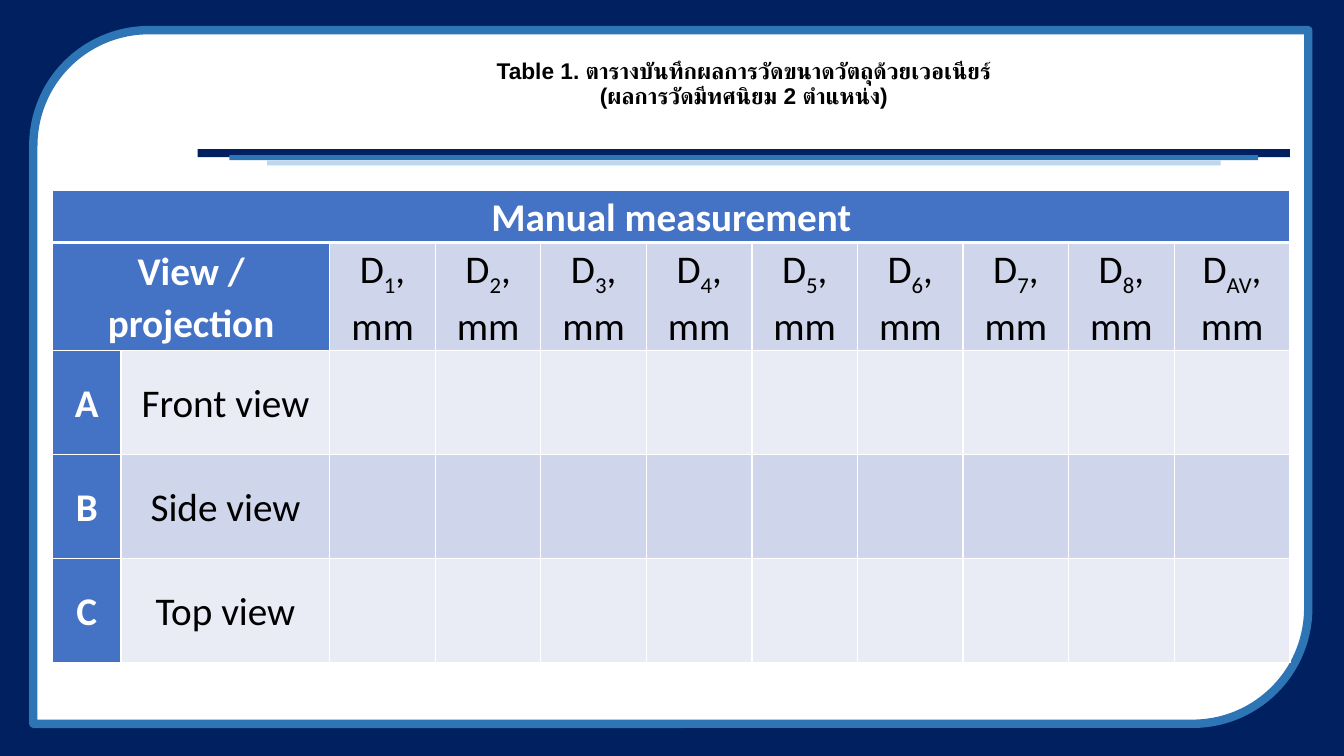
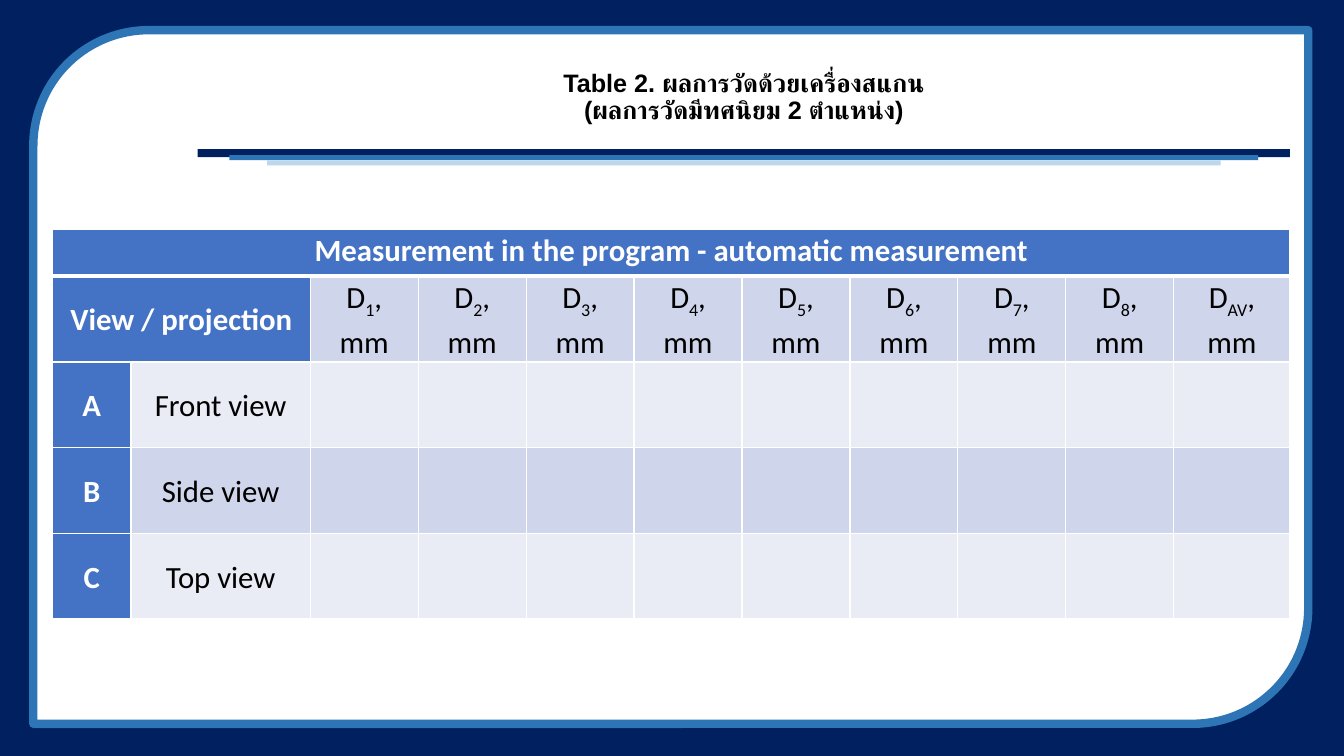
from dataclasses import dataclass

from lxml import etree
from pptx import Presentation
from pptx.dml.color import RGBColor
from pptx.enum.shapes import MSO_SHAPE
from pptx.enum.text import MSO_ANCHOR, MSO_AUTO_SIZE, PP_ALIGN
from pptx.oxml.ns import qn
from pptx.util import Cm, Pt

RECT = MSO_SHAPE.RECTANGLE
DIAGONAL = MSO_SHAPE.ROUND_2_DIAG_RECTANGLE
TOP = MSO_ANCHOR.TOP
MIDDLE = MSO_ANCHOR.MIDDLE
CENTER = PP_ALIGN.CENTER
NO_FIT = MSO_AUTO_SIZE.NONE


@dataclass(frozen=True)
class Theme:
    navy: str = "002060"
    blue: str = "2E75B6"
    pale: str = "BDD7EE"
    head: str = "4472C4"
    band_dark: str = "CFD5EA"
    band_light: str = "E9EBF5"
    white: str = "FFFFFF"
    black: str = "000000"
    title_font: str = "Arial"
    table_font: str = "Calibri"
    frame_line: float = 6
    grid_line: float = 1
    head_line: float = 3


THEME = Theme()
SLIDE_W, SLIDE_H = 33.87, 19.05
TITLE_BOX = (4.98, 1.24, 27.53, 2.46)
RULE_BOX = (4.98, 3.76, 27.53, 0.41)
VIEWS = (("A", "Front view"), ("B", "Side view"), ("C", "Top view"))
DIAMETERS = (*"12345678", "AV")
TABLES = (
    dict(title="Table 1. ตารางบันทึกผลการวัดขนาดวัตถุด้วยเวอเนียร์\v(ผลการวัดมีทศนิยม 2 ตำแหน่ง)",
         title_size=16.2, title_bottom=0.79, heading="Manual measurement",
         box=(1.32, 4.8, 31.19, 11.79), size=28, inset=0.25,
         label_widths=(1.73, 5.26), value_width=2.66, row_height=2.62),
    dict(title="Table 2. ผลการวัดด้วยเครื่องสแกน\v(ผลการวัดมีทศนิยม 2 ตำแหน่ง)",
         title_size=18, title_bottom=0.13,
         heading="Measurement in the program - automatic measurement",
         box=(1.32, 5.79, 31.19, 9.81), size=22, inset=0.41,
         label_widths=(1.98, 4.52), value_width=2.72, row_height=2.16),
)


def rgb(color):
    return RGBColor.from_string(color)


def add_block(shapes, kind, box, fill, line=None):
    sp = shapes.add_shape(kind, *map(Cm, box))
    sp.shadow.inherit = False
    sp.fill.solid()
    sp.fill.fore_color.rgb = rgb(fill)
    if line:
        sp.line.color.rgb = rgb(line)
        sp.line.width = Pt(THEME.frame_line)
    else:
        sp.line.fill.background()
    return sp


def add_frame(shapes, box):
    x, y, w, h = box
    inner = (x + 0.84, y + 0.76, w - 1.74, h - 1.57)
    return [add_block(shapes, RECT, box, THEME.navy),
            add_block(shapes, DIAGONAL, inner, THEME.white, THEME.blue)]


def add_title_rule(shapes, box):
    x, y, w, _ = box
    bars = ((0, 0, 0.2, THEME.navy), (0.8, 0.15, 0.13, THEME.blue),
            (1.75, 0.28, 0.13, THEME.pale))
    return [add_block(shapes, RECT, (x + inset, y + drop, w - 2 * inset, height), color)
            for inset, drop, height, color in bars]


def set_up_layout(layout, slide):
    parts = add_frame(slide.shapes, (0, 0, SLIDE_W, SLIDE_H))
    parts += add_title_rule(slide.shapes, RULE_BOX)
    for number, sp in enumerate(parts, 100):
        sp._element.nvSpPr.cNvPr.set("id", str(number))
        layout.shapes._spTree.append(sp._element)
    title = layout.placeholders[0]
    title.left, title.top, title.width, title.height = map(Cm, TITLE_BOX)


def fill_title(title, text, size, bottom):
    tf = title.text_frame
    tf.text = text
    tf.auto_size = NO_FIT
    tf.vertical_anchor = MIDDLE
    tf.margin_bottom = Cm(bottom)
    p = tf.paragraphs[0]
    p.alignment = CENTER
    p.line_spacing = 0.9
    for r in p.runs:
        r.font.name = THEME.title_font
        r.font.size = Pt(size)
        r.font.bold = True
        r.font.color.rgb = rgb(THEME.black)


def style_cell(cell, fill, top, bottom):
    tc_pr = cell._tc.get_or_add_tcPr()
    line = THEME.grid_line
    for side, width in (("L", line), ("R", line), ("T", top), ("B", bottom)):
        ln = etree.SubElement(tc_pr, qn(f"a:ln{side}"), w=str(Pt(width)))
        solid = etree.SubElement(ln, qn("a:solidFill"))
        etree.SubElement(solid, qn("a:srgbClr"), val=THEME.white)
    cell.fill.solid()
    cell.fill.fore_color.rgb = rgb(fill)


def write_cell(cell, paragraphs, size, inset, head=False, anchor=MIDDLE):
    cell.margin_left = cell.margin_right = Cm(inset)
    cell.margin_top = cell.margin_bottom = 0
    cell.vertical_anchor = anchor
    tf = cell.text_frame
    for i, runs in enumerate(paragraphs):
        p = tf.add_paragraph() if i else tf.paragraphs[0]
        p.alignment = CENTER
        p.line_spacing = 1.07
        for j, text in enumerate(runs):
            r = p.add_run()
            r.text = text
            r.font.name = THEME.table_font
            r.font.size = Pt(size)
            r.font.bold = head
            r.font.color.rgb = rgb(THEME.white if head else THEME.black)
            if j == 1:
                r.font._element.set("baseline", "-25000")


def add_measurements(slide, box, heading, size, inset, label_widths, value_width, row_height):
    rows, cols = len(VIEWS) + 2, len(DIAMETERS) + 2
    table = slide.shapes.add_table(rows, cols, *map(Cm, box)).table
    table.first_row = table.horz_banding = False
    widths = [*label_widths, *[value_width] * (cols - 3)]
    widths.append(box[2] - sum(widths))
    heights = [box[3] - row_height * (rows - 1), *[row_height] * (rows - 1)]
    for column, width in zip(table.columns, widths):
        column.width = Cm(width)
    for row, height in zip(table.rows, heights):
        row.height = Cm(height)

    for r in range(rows):
        band = THEME.band_dark if r % 2 else THEME.band_light
        for c in range(cols):
            is_head = r == 0 or c == 0 or (r == 1 and c == 1)
            style_cell(table.cell(r, c), THEME.head if is_head else band,
                       THEME.head_line if r == 1 else THEME.grid_line,
                       THEME.head_line if r == 0 else THEME.grid_line)
    table.cell(0, 0).merge(table.cell(0, cols - 1))
    table.cell(1, 0).merge(table.cell(1, 1))

    write_cell(table.cell(0, 0), [[heading]], size, inset, True, TOP)
    write_cell(table.cell(1, 0), [["View / projection"]], size, inset, True)
    for c, index in enumerate(DIAMETERS, 2):
        write_cell(table.cell(1, c), [["D", index, ","], ["mm"]], size, inset)
    for r, (letter, view) in enumerate(VIEWS, 2):
        write_cell(table.cell(r, 0), [[letter]], size, inset, True)
        write_cell(table.cell(r, 1), [[view]], size, inset)


def add_table_slide(prs, layout, title, title_size, title_bottom, **table):
    slide = prs.slides.add_slide(layout)
    if len(prs.slides) == 1:
        set_up_layout(layout, slide)
    fill_title(slide.shapes.title, title, title_size, title_bottom)
    add_measurements(slide, **table)


def main():
    prs = Presentation()
    prs.slide_width, prs.slide_height = Cm(SLIDE_W), Cm(SLIDE_H)
    layout = prs.slide_layouts[5]
    for table in TABLES:
        add_table_slide(prs, layout, **table)
    prs.save("out.pptx")


if __name__ == "__main__":
    main()
